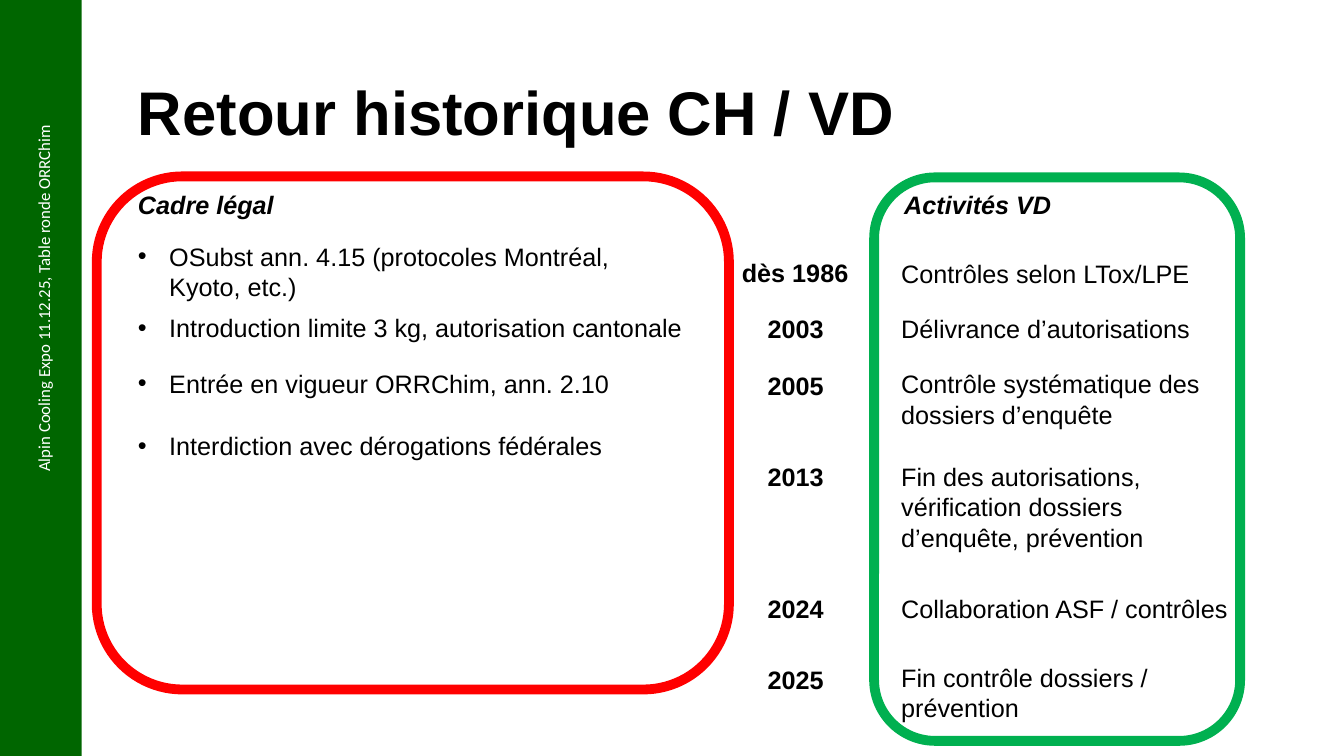
import pptx
import pptx.util
import pptx.dml.color
import pptx.enum.shapes
import pptx.enum.text
import lxml.etree

Inches = pptx.util.Inches
Shapes = pptx.enum.shapes.MSO_SHAPE
LINE_HEIGHT = 0.3
TEXT_PADDING = 0.1

LEGAL_ITEMS = [
    (0.59, "OSubst ann. 4.15 (protocoles Montréal, Kyoto, etc.)", 5.61, 2),
    (1.3, "Introduction limite 3 kg, autorisation cantonale", 5.65, 1),
    (1.85, "Entrée en vigueur ORRChim, ann. 2.10", 4.92, 1),
    (2.47, "Interdiction avec dérogations fédérales", 4.85, 1),
]
YEARS = [
    (2.5, "dès 1986"),
    (3.06, "2003"),
    (3.62, "2005"),
    (4.53, "2013"),
    (5.84, "2024"),
    (6.54, "2025"),
]
ACTIVITIES = [
    (0.75, "Contrôles selon LTox/LPE", 3.09, 1),
    (1.3, "Délivrance d’autorisations", 3.09, 1),
    (1.85, "Contrôle systématique des dossiers d’enquête", 3.23, 2),
    (2.77, "Fin des autorisations, vérification dossiers d’enquête, prévention", 3.23, 3),
    (4.08, "Collaboration ASF / contrôles", 3.47, 1),
    (4.76, "Fin contrôle dossiers / prévention", 3.57, 2),
]


def color(hex_value):
    return pptx.dml.color.RGBColor.from_string(hex_value)


def add_text(slide, left, top, width, text, lines=1, height=None, size=18,
             bold=False, italic=False, bullet=False, font="Arial", fill="000000"):
    height = height or TEXT_PADDING + lines * LINE_HEIGHT
    shape = slide.shapes.add_textbox(Inches(left), Inches(top), Inches(width), Inches(height))
    frame = shape.text_frame
    frame.word_wrap = lines > 1
    paragraph = frame.paragraphs[0]
    paragraph.text = text
    if bullet:
        properties = paragraph._p.get_or_add_pPr()
        properties.set("marL", str(Inches(0.31)))
        properties.set("indent", str(Inches(-0.31)))
        namespace = pptx.oxml.ns.qn
        lxml.etree.SubElement(properties, namespace("a:buFont")).set("typeface", "Arial")
        lxml.etree.SubElement(properties, namespace("a:buChar")).set("char", "•")
    paragraph.font.name = font
    paragraph.font.size = pptx.util.Pt(size)
    paragraph.font.bold = bold
    paragraph.font.italic = italic
    paragraph.font.color.rgb = color(fill)
    return shape


def add_page(slide):
    slide.background.fill.solid()
    slide.background.fill.fore_color.rgb = color("006600")
    page = slide.shapes.add_shape(Shapes.RECTANGLE, Inches(0.81), 0, Inches(12.52), Inches(7.5))
    page.shadow.inherit = False
    page.fill.solid()
    page.fill.fore_color.rgb = color("FFFFFF")
    page.line.fill.background()


def add_title(slide, left, top, width, height):
    title = add_text(slide, left, top, width, "Retour historique CH / VD",
                     height=height, size=44, bold=True)
    title.text_frame.word_wrap = True
    title.text_frame.vertical_anchor = pptx.enum.text.MSO_ANCHOR.MIDDLE
    title.text_frame.paragraphs[0].line_spacing = 0.9


def add_side_label(slide, left, top, width, height):
    label = add_text(slide, left, top, width, "Alpin Cooling Expo 11.12.25, Table ronde ORRChim",
                     height=height, size=12, font="Calibri", fill="FFFFFF")
    label.rotation = 270
    label.text_frame.word_wrap = True
    label.text_frame.vertical_anchor = pptx.enum.text.MSO_ANCHOR.MIDDLE
    label.text_frame.paragraphs[0].alignment = pptx.enum.text.PP_ALIGN.CENTER


def add_frame(slide, left, top, width, height, outline):
    frame = slide.shapes.add_shape(Shapes.ROUNDED_RECTANGLE, Inches(left), Inches(top),
                                   Inches(width), Inches(height))
    frame.shadow.inherit = False
    frame.fill.background()
    frame.line.color.rgb = color(outline)
    frame.line.width = pptx.util.Pt(7)


def add_legal_panel(slide, left, top, width, height):
    add_text(slide, left + 0.31, top + 0.08, 1.56, "Cadre légal", bold=True, italic=True)
    for offset, text, text_width, lines in LEGAL_ITEMS:
        add_text(slide, left + 0.31, top + offset, text_width, text, lines, bullet=True)
    add_frame(slide, left, top, width, height, "FF0000")


def add_years(slide, left, width):
    for top, year in YEARS:
        year_width = width if " " in year else 0.76
        add_text(slide, left + (width - year_width) / 2, top, year_width, year, bold=True)


def add_activities_panel(slide, left, top, width, height):
    add_text(slide, left + 0.2, top + 0.07, 1.67, "Activités VD", bold=True, italic=True)
    for offset, text, text_width, lines in ACTIVITIES:
        add_text(slide, left + 0.17, top + offset, text_width, text, lines)
    add_frame(slide, left, top, width, height, "00B050")


def main():
    presentation = pptx.Presentation()
    presentation.slide_width = Inches(13.33)
    presentation.slide_height = Inches(7.5)
    slide = presentation.slides.add_slide(presentation.slide_layouts[6])
    add_page(slide)
    add_title(slide, 1.27, 0.43, 10.58, 1.44)
    add_side_label(slide, -2.07, 2.76, 5, 0.4)
    add_legal_panel(slide, 0.96, 1.75, 6.27, 5.09)
    add_years(slide, 7.26, 1.27)
    add_activities_panel(slide, 8.67, 1.76, 3.63, 5.59)
    presentation.save("out.pptx")


if __name__ == "__main__":
    main()
